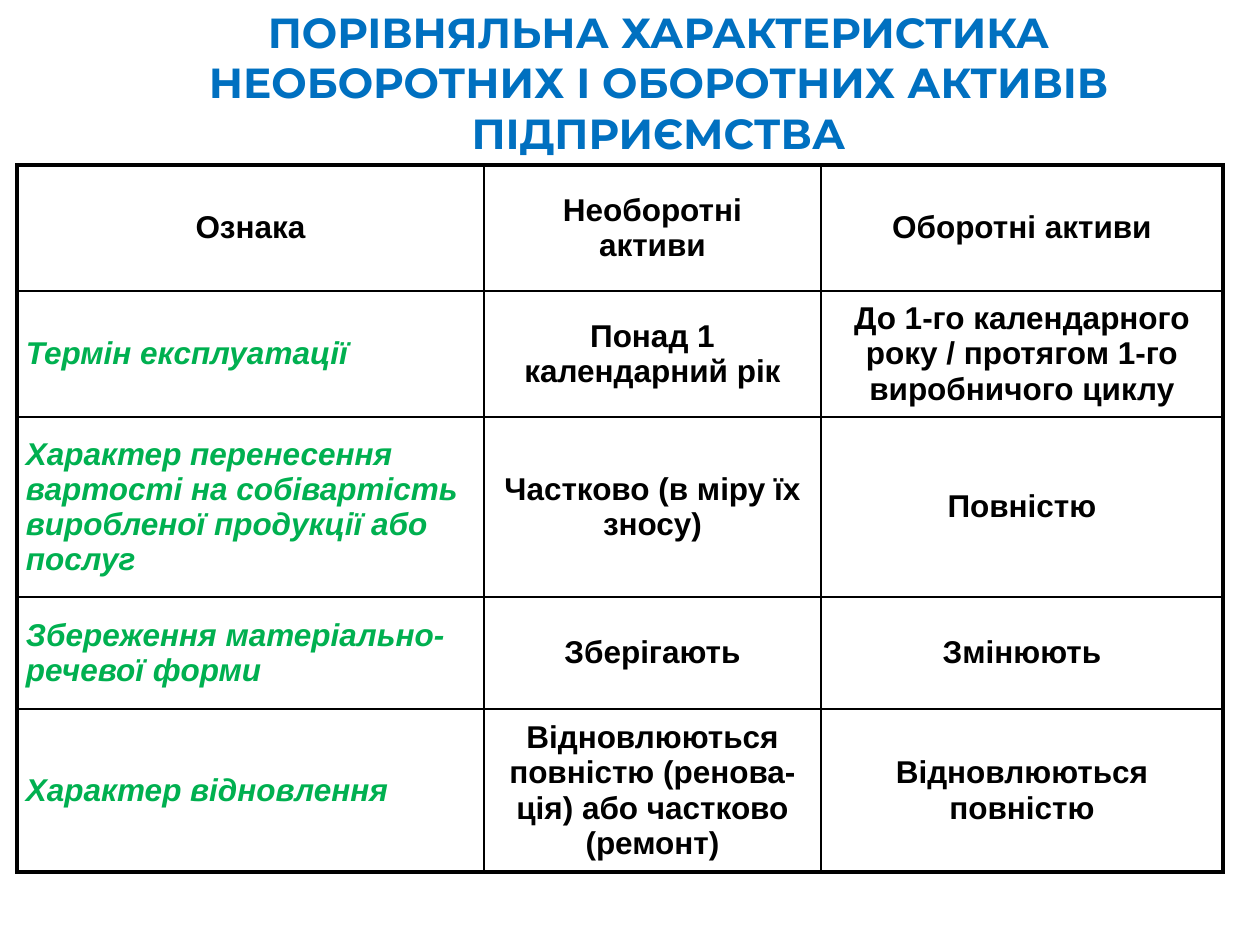
from dataclasses import dataclass

from lxml.etree import SubElement as Sub
from pptx import Presentation
from pptx.dml.color import RGBColor as RGB
from pptx.enum.text import MSO_ANCHOR as Anchor, MSO_AUTO_SIZE as Fit, PP_ALIGN as Align
from pptx.oxml.ns import qn
from pptx.util import Pt

SCALE = 914400 / 126


def px(n):
    return round(n * SCALE)


@dataclass(frozen=True)
class Theme:
    blue: str = "0070C0"
    green: str = "00B050"
    black: str = "000000"
    head: str = "Montserrat"
    body: str = "Arial"
    big: int = 24
    text: int = 18
    thick: float = 2.25
    thin: float = 1


class Deck:
    def __init__(self, theme):
        self.theme = theme
        self.prs = Presentation()
        self.prs.slide_width, self.prs.slide_height = px(1260), px(945)
        self.slide = self.prs.slides.add_slide(self.prs.slide_layouts[5])

    def style(self, para, face, size, color, align, slant=False):
        para.alignment = align
        font = para.font
        font.name, font.size = face, Pt(size)
        font.bold, font.italic = True, slant
        font.color.rgb = RGB.from_string(color)

    def title(self, text, box):
        t = self.theme
        shape = self.slide.shapes.title
        shape.left, shape.top, shape.width, shape.height = map(px, box)
        frame = shape.text_frame
        frame.text = text
        frame.word_wrap, frame.auto_size = True, Fit.NONE
        frame.vertical_anchor = Anchor.TOP
        self.style(frame.paragraphs[0], t.head, t.big, t.blue, Align.CENTER)

    def border(self, cell, edges):
        props = cell._tc.get_or_add_tcPr()
        for side, thick in edges.items():
            width = self.theme.thick if thick else self.theme.thin
            line = Sub(props, qn(f"a:ln{side}"), w=str(Pt(width)))
            Sub(Sub(line, qn("a:solidFill")), qn("a:srgbClr"), val=self.theme.black)

    def cell(self, cell, text, label):
        t = self.theme
        cell.text = text
        cell.vertical_anchor = Anchor.MIDDLE
        cell.margin_left = cell.margin_right = px(9)
        cell.margin_top = cell.margin_bottom = px(6)
        color, align = (t.green, Align.LEFT) if label else (t.black, Align.CENTER)
        for para in cell.text_frame.paragraphs:
            self.style(para, t.body, t.text, color, align, label)

    def table(self, rows, left, top, wide, high):
        box = map(px, (left, top, sum(wide), sum(high)))
        grid = self.slide.shapes.add_table(len(high), len(wide), *box).table
        grid.first_row = grid.horz_banding = False
        for col, size in zip(grid.columns, wide):
            col.width = px(size)
        for row, size in zip(grid.rows, high):
            row.height = px(size)
        for r, row in enumerate(rows):
            for c, text in enumerate(row):
                cell = grid.cell(r, c)
                self.cell(cell, text, r > 0 and c == 0)
                self.border(cell, {"L": c == 0, "R": c == len(wide) - 1,
                                   "T": r == 0, "B": r == len(high) - 1})
                cell.fill.background()

    def save(self):
        self.prs.save("out.pptx")


ROWS = [
    ("Ознака", "Необоротні\nактиви", "Оборотні активи"),
    ("Термін експлуатації", "Понад 1 календарний рік",
     "До 1-го календарного року / протягом 1-го виробничого циклу"),
    ("Характер перенесення вартості на собівартість виробленої продукції або послуг",
     "Частково (в міру їх зносу)", "Повністю"),
    ("Збереження матеріально-речевої форми", "Зберігають", "Змінюють"),
    ("Характер відновлення",
     "Відновлюються повністю (ренова-ція) або частково (ремонт)",
     "Відновлюються повністю"),
]


def main():
    deck = Deck(Theme())
    deck.title("ПОРІВНЯЛЬНА ХАРАКТЕРИСТИКА НЕОБОРОТНИХ І ОБОРОТНИХ АКТИВІВ ПІДПРИЄМСТВА",
               (121, 0, 1075, 165))
    deck.table(ROWS, 17, 165, (467, 337, 402), (126, 126, 180, 112, 163))
    deck.save()


if __name__ == "__main__":
    main()
